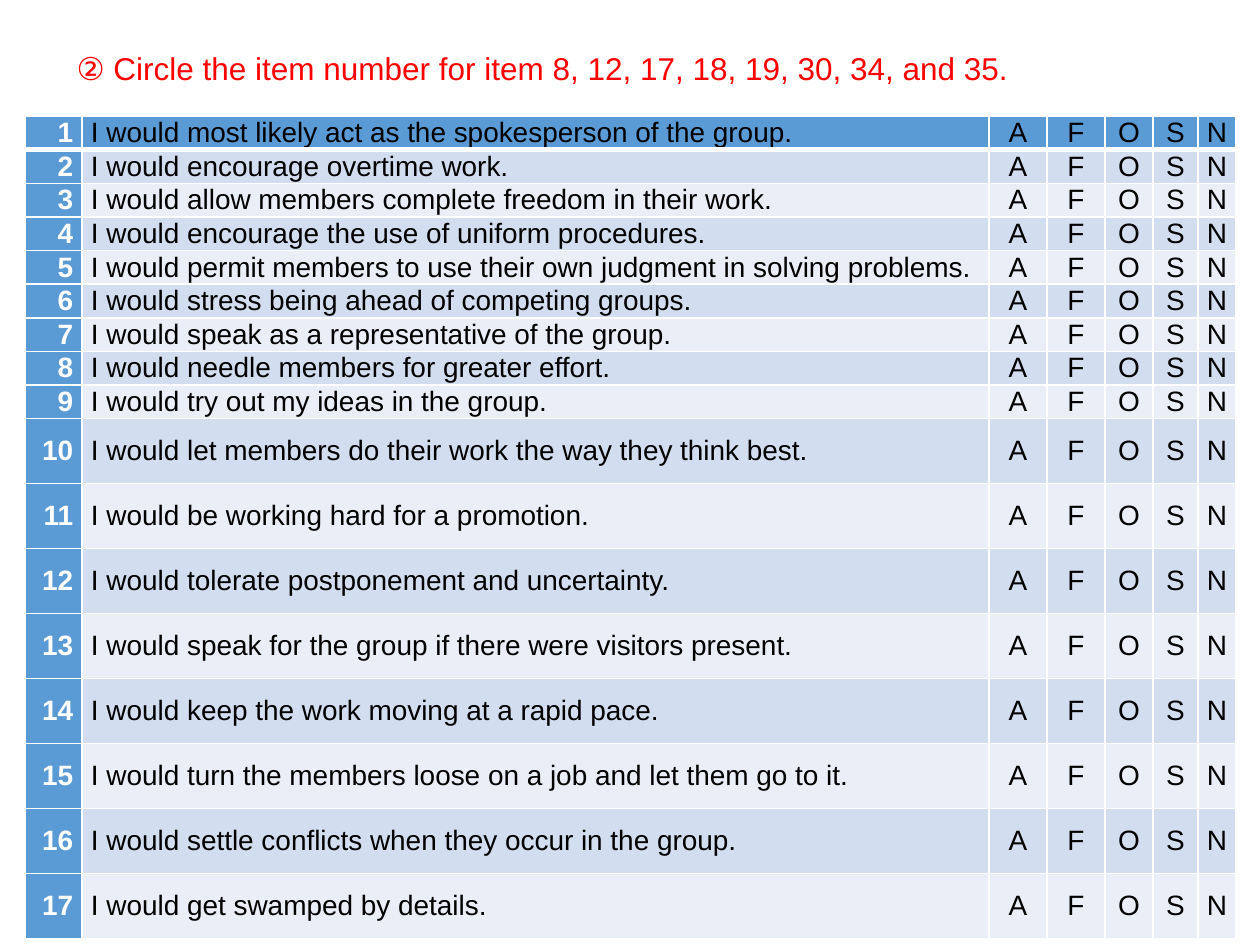
from dataclasses import dataclass

from lxml import etree
from pptx import Presentation
from pptx import util as u
from pptx.dml.color import RGBColor
from pptx.enum import text
from pptx.oxml.ns import qn

PX_PER_INCH = 126
TITLE_ONLY = 5


def px(n):
    return u.Emu(round(n * u.Inches(1) / PX_PER_INCH))


@dataclass(frozen=True)
class Theme:
    font: str = "Arial"
    title_pt: int = 18
    body_pt: int = 16
    title: str = "FF0000"
    ink: str = "000000"
    white: str = "FFFFFF"
    accent: str = "5B9BD5"
    bands: tuple = ("EAEFF7", "D2DEEF")
    rule_pt: int = 1
    header_rule_pt: int = 3


STATEMENTS = [
    "I would most likely act as the spokesperson of the group.",
    "I would encourage overtime work.",
    "I would allow members complete freedom in their work.",
    "I would encourage the use of uniform procedures.",
    "I would permit members to use their own judgment in solving problems.",
    "I would stress being ahead of competing groups.",
    "I would speak as a representative of the group.",
    "I would needle members for greater effort.",
    "I would try out my ideas in the group.",
    "I would let members do their work the way they think best.",
    "I would be working hard for a promotion.",
    "I would tolerate postponement and uncertainty.",
    "I would speak for the group if there were visitors present.",
    "I would keep the work moving at a rapid pace.",
    "I would turn the members loose on a job and let them go to it.",
    "I would settle conflicts when they occur in the group.",
    "I would get swamped by details.",
]
ANSWERS = "AFOSN"
COLUMN_WIDTHS = [57, 907, 58, 58, 48, 45, 38]
SHORT_ROWS, SHORT_BLOCK = 9, 303
TALL_ROW = 65


class Deck:
    def __init__(self, prs, theme):
        self.theme = theme
        self.s = prs.slides.add_slide(prs.slide_layouts[TITLE_ONLY])

    def style(self, p, size, color, align, bold=False):
        p.alignment = align
        p.font.name = self.theme.font
        p.font.size = u.Pt(size)
        p.font.bold = bold
        p.font.color.rgb = RGBColor.from_string(color)

    def title(self, words, left, top, width, height):
        sp = self.s.shapes.title
        sp.left, sp.top, sp.width, sp.height = map(px, (left, top, width, height))
        tf = sp.text_frame
        tf.text = words
        tf.word_wrap = True
        tf.auto_size = text.MSO_AUTO_SIZE.SHAPE_TO_FIT_TEXT
        tf.vertical_anchor = text.MSO_ANCHOR.TOP
        self.style(tf.paragraphs[0], self.theme.title_pt, self.theme.title,
                   text.PP_ALIGN.LEFT)

    def borders(self, cell, **widths):
        """Draw cell edges, given in L, R, T, B order as point widths."""
        tc_pr = cell._tc.get_or_add_tcPr()
        for i, (side, width) in enumerate(widths.items()):
            ln = etree.Element(qn(f"a:ln{side}"), w=str(u.Pt(width)))
            fill = etree.SubElement(ln, qn("a:solidFill"))
            etree.SubElement(fill, qn("a:srgbClr"), val=self.theme.white)
            tc_pr.insert(i, ln)

    def cell(self, cell, words, fill, color, align, bold):
        cell.margin_left = cell.margin_right = px(9)
        cell.margin_top = cell.margin_bottom = 0
        cell.vertical_anchor = text.MSO_ANCHOR.MIDDLE
        cell.fill.solid()
        cell.fill.fore_color.rgb = RGBColor.from_string(fill)
        cell.text = words
        self.style(cell.text_frame.paragraphs[0], self.theme.body_pt,
                   color, align, bold)

    def questionnaire(self, left, top, statements, widths, heights):
        """Number, statement and answer letters, one statement a row."""
        t = self.theme
        frame = self.s.shapes.add_table(
            len(statements), len(widths), px(left), px(top),
            px(sum(widths)), sum(heights))
        table = frame.table
        table.first_row = table.horz_banding = False
        for column, width in zip(table.columns, widths):
            column.width = px(width)
        for row, height in zip(table.rows, heights):
            row.height = height
        aligns = [text.PP_ALIGN.RIGHT, text.PP_ALIGN.LEFT]
        aligns += [text.PP_ALIGN.CENTER] * len(ANSWERS)
        for i, statement in enumerate(statements):
            band = t.accent if i == 0 else t.bands[i % 2]
            above = t.header_rule_pt if i == 1 else t.rule_pt
            below = t.header_rule_pt if i == 0 else t.rule_pt
            for j, words in enumerate([str(i + 1), statement, *ANSWERS]):
                is_number = j == 0
                cell = table.cell(i, j)
                self.cell(cell, words, t.accent if is_number else band,
                          t.white if is_number else t.ink, aligns[j], is_number)
                self.borders(cell, L=t.rule_pt, R=t.rule_pt, T=above, B=below)


def main():
    prs = Presentation()
    prs.slide_width, prs.slide_height = u.Inches(10), u.Inches(7.5)
    deck = Deck(prs, Theme())
    deck.title("② Circle the item number for item 8, 12, 17, 18, 19, 30, 34, and 35.",
               64, 43, 1052, 50)
    heights = [px(SHORT_BLOCK) // SHORT_ROWS] * SHORT_ROWS
    heights += [px(TALL_ROW)] * (len(STATEMENTS) - SHORT_ROWS)
    deck.questionnaire(25, 116, STATEMENTS, COLUMN_WIDTHS, heights)
    prs.save("out.pptx")


if __name__ == "__main__":
    main()
